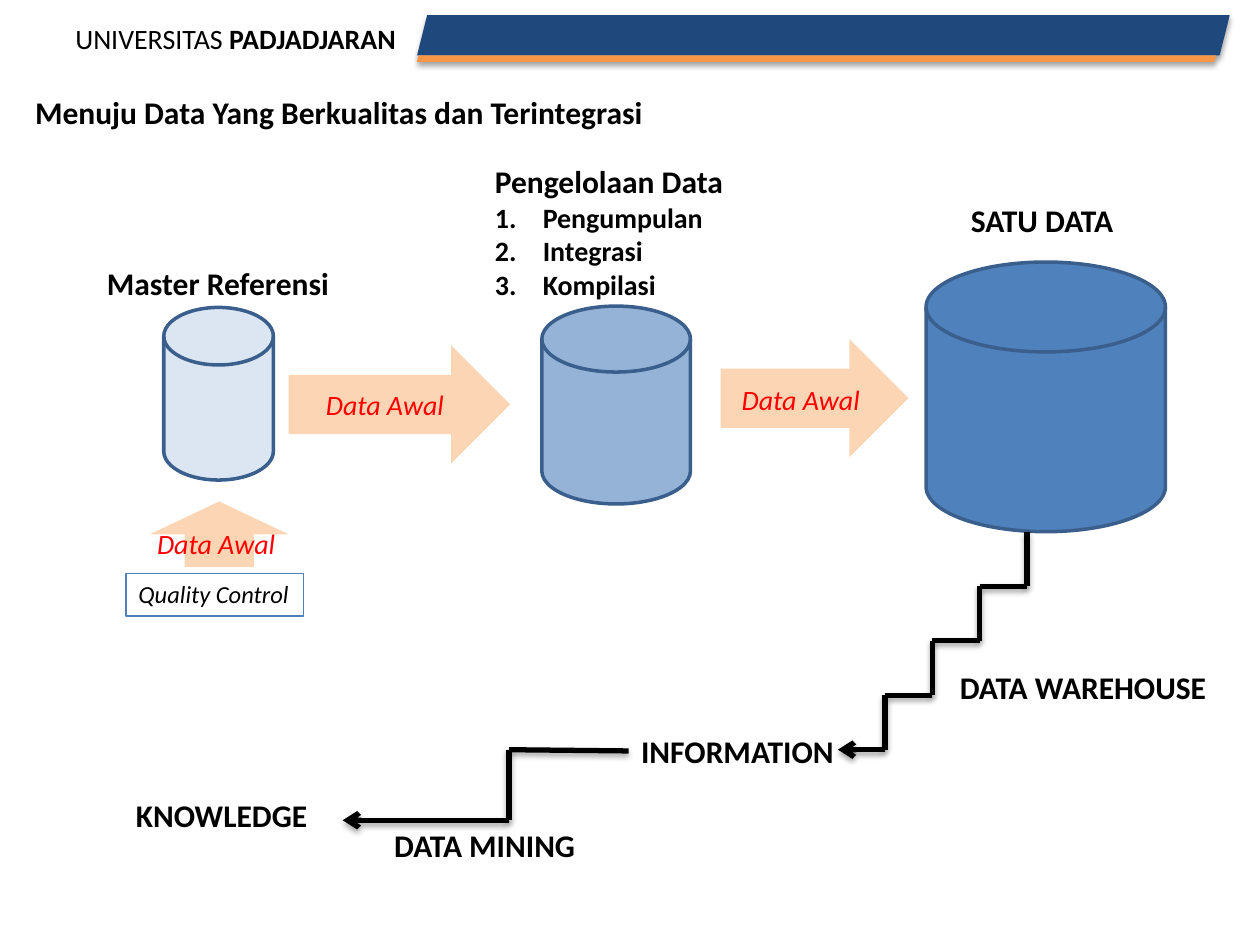
from itertools import pairwise

from lxml.etree import SubElement
from pptx import Presentation
from pptx.dml.color import RGBColor
from pptx.enum.shapes import MSO_CONNECTOR, MSO_SHAPE
from pptx.enum.text import MSO_AUTO_SIZE, PP_ALIGN
from pptx.oxml.ns import qn
from pptx.util import Inches, Pt

BLACK, RED, PEACH = "000000", "FF0000", "FCD5B5"
NAVY, ORANGE, BLUE, OUTLINE = "1F497D", "F79646", "4F81BD", "3A5F8C"


def color(hex_string):
    return RGBColor.from_string(hex_string)


def inches(box):
    return [Inches(length) for length in box]


def add_shadow(part):
    effects = SubElement(part._element.spPr, qn("a:effectLst"))
    shadow = SubElement(effects, qn("a:outerShdw"), blurRad="40000",
                        dist="23000", dir="5400000", rotWithShape="0")
    black = SubElement(shadow, qn("a:srgbClr"), val=BLACK)
    SubElement(black, qn("a:alpha"), val="35000")


def add_run(paragraph, text, size, bold=False, italic=False, ink=BLACK):
    run = paragraph.add_run()
    run.text = text
    run.font.name = "Calibri"
    run.font.size = Pt(size)
    run.font.bold = bold
    run.font.italic = italic
    run.font.color.rgb = color(ink)


def add_frame(slide, box, wrap=False):
    label = slide.shapes.add_textbox(*inches(box))
    label.text_frame.word_wrap = wrap
    label.text_frame.auto_size = MSO_AUTO_SIZE.SHAPE_TO_FIT_TEXT
    return label


def add_heading(slide, box, text, align=PP_ALIGN.LEFT):
    heading = add_frame(slide, box)
    paragraph = heading.text_frame.paragraphs[0]
    paragraph.alignment = align
    add_run(paragraph, text, 18, bold=True)
    return heading


def add_preset(slide, preset, box, fill, outline=None):
    shape = slide.shapes.add_shape(preset, *inches(box))
    shape.shadow.inherit = False
    shape.fill.solid()
    shape.fill.fore_color.rgb = color(fill)
    if outline:
        shape.line.color.rgb = color(outline)
        shape.line.width = Pt(2)
    else:
        shape.line.fill.background()
    return shape


def add_header(slide, box):
    left, top, width, height = box
    university = add_frame(slide, (left, top, 2.83, 0.67))
    paragraph = university.text_frame.paragraphs[0]
    add_run(paragraph, "UNIVERSITAS ", 16)
    add_run(paragraph, "PADJADJARAN", 16, bold=True)
    band_left, band_width, stripe = left + 2.81, width - 2.81, 0.05
    bands = [
        ((band_left, top, band_width, height - stripe), NAVY),
        ((band_left, top + height - stripe, band_width - 0.11, stripe), ORANGE),
    ]
    for band_box, fill in bands:
        band = add_preset(slide, MSO_SHAPE.PARALLELOGRAM, band_box, fill)
        band._element.spPr.remove(band._element.spPr.find(qn("a:effectLst")))
        add_shadow(band)


def add_store(slide, box, fill):
    add_preset(slide, MSO_SHAPE.FLOWCHART_MAGNETIC_DISK, box, fill, OUTLINE)


def add_flow(slide, box, label_at, rotation=0):
    arrow = add_preset(slide, MSO_SHAPE.RIGHT_ARROW, box, PEACH)
    arrow.rotation = rotation
    label = add_frame(slide, (*label_at, 1.15, 0.37))
    paragraph = label.text_frame.paragraphs[0]
    paragraph.alignment = PP_ALIGN.CENTER
    add_run(paragraph, "Data Awal", 16, italic=True, ink=RED)


def add_quality_control(slide, box):
    control = add_frame(slide, box)
    control.line.color.rgb = color(BLUE)
    control.line.width = Pt(0.75)
    add_run(control.text_frame.paragraphs[0], "Quality Control", 14, italic=True)


def add_management(slide, box):
    frame = add_frame(slide, box, wrap=True).text_frame
    add_run(frame.paragraphs[0], "Pengelolaan Data", 18, bold=True)
    indent = Inches(0.38)
    for task in ("Pengumpulan", "Integrasi", "Kompilasi"):
        paragraph = frame.add_paragraph()
        properties = paragraph._p.get_or_add_pPr()
        properties.set("marL", str(indent))
        properties.set("indent", str(-indent))
        SubElement(properties, qn("a:buFont"), typeface="+mj-lt")
        SubElement(properties, qn("a:buAutoNum"), type="arabicPeriod")
        add_run(paragraph, task, 16, bold=True)


def add_stairs(slide, points):
    stairs = slide.shapes.add_group_shape()
    steps = []
    for start, end in pairwise(points):
        step = stairs.shapes.add_connector(
            MSO_CONNECTOR.STRAIGHT, *inches((*start, *end)))
        step.line.color.rgb = color(BLACK)
        step.line.width = Pt(3)
        add_shadow(step)
        steps.append(step)
    SubElement(steps[-1].line._get_or_add_ln(), qn("a:tailEnd"), type="arrow")
    return steps


def add_warehouse_stairs(slide, box, count=4):
    left, top, width, height = box
    corners = [(left + width, top)]
    for step in range(1, count + 1):
        y = top + height * step / count
        corners.append((corners[-1][0], y))
        corners.append((left + width * (1 - step / count), y))
    add_stairs(slide, corners)


def add_mining_stairs(slide, box, information):
    left, top, width, height = box
    turn, bottom = left + 1.32, top + height
    corners = [(left + width, top), (turn, top), (turn, bottom), (left, bottom)]
    add_stairs(slide, corners)[0].begin_connect(information, 1)


def main():
    deck = Presentation()
    deck.slide_width, deck.slide_height = Inches(10), Inches(7.5)
    slide = deck.slides.add_slide(deck.slide_layouts[6])

    add_header(slide, (0.5, 0.12, 9.26, 0.37))
    add_store(slide, (1.3, 2.44, 0.87, 1.37), "DCE6F2")
    add_store(slide, (4.3, 2.43, 1.18, 1.57), "95B3D7")
    add_store(slide, (7.35, 2.08, 1.9, 2.14), BLUE)
    add_quality_control(slide, (1, 4.55, 1.41, 0.34))
    add_flow(slide, (1.48, 3.69, 0.52, 1.1), (1.14, 4.13), rotation=270)
    add_heading(slide, (0.18, 0.69, 5.07, 0.4),
                "Menuju Data Yang Berkualitas dan Terintegrasi")
    add_heading(slide, (0.75, 2.05, 1.98, 0.4), "Master Referensi")
    add_management(slide, (3.83, 1.24, 2.24, 1.25))
    add_heading(slide, (7.6, 1.55, 1.34, 0.4), "SATU DATA", PP_ALIGN.CENTER)
    add_flow(slide, (2.29, 2.74, 1.76, 0.94), (2.48, 3.03))
    add_flow(slide, (5.72, 2.69, 1.49, 0.94), (5.78, 2.99))
    add_warehouse_stairs(slide, (6.65, 4.22, 1.5, 1.73))
    add_heading(slide, (7.52, 5.25, 2.17, 0.4), "DATA WAREHOUSE")
    information = add_heading(slide, (4.99, 5.76, 1.74, 0.4), "INFORMATION")
    add_mining_stairs(slide, (2.72, 5.95, 2.27, 0.56), information)
    add_heading(slide, (0.98, 6.27, 1.58, 0.4), "KNOWLEDGE")
    add_heading(slide, (3.03, 6.51, 1.65, 0.4), "DATA MINING")

    deck.save("out.pptx")


if __name__ == "__main__":
    main()
